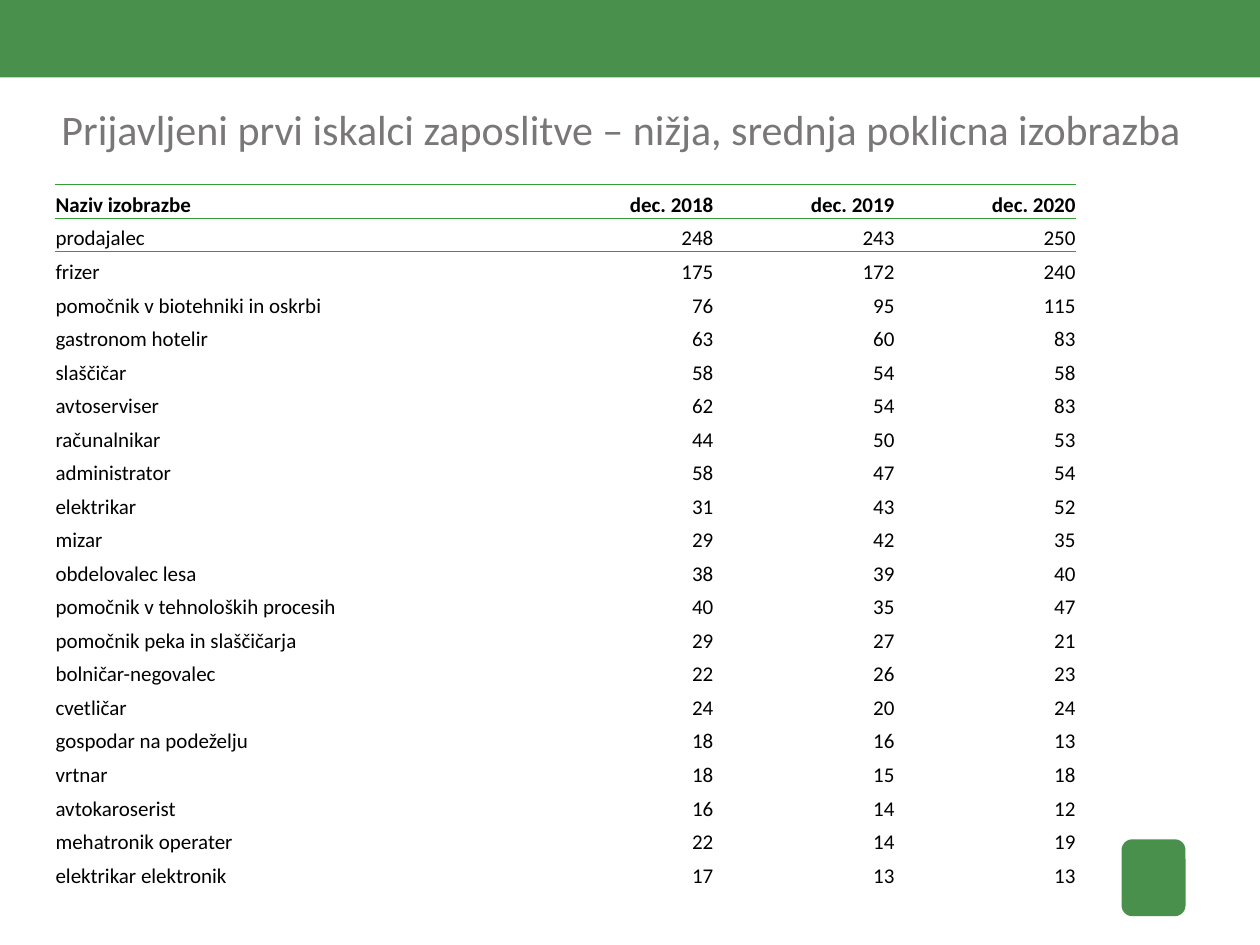
from typing import NamedTuple

from lxml.etree import SubElement
from pptx import Presentation
from pptx.dml.color import RGBColor
from pptx.enum.shapes import MSO_SHAPE
from pptx.enum.text import MSO_ANCHOR, PP_ALIGN
from pptx.oxml.ns import qn
from pptx.util import Cm, Pt

GREEN = RGBColor(0x49, 0x90, 0x4D)
RULE_GREEN = RGBColor(0x33, 0x9E, 0x35)
GREY = RGBColor(0x79, 0x77, 0x77)
BLACK = RGBColor(0, 0, 0)

FONT = "Calibri"
NO_GRID_STYLE = "{2D5ABB26-0587-4C30-8999-92F81FD0307C}"
NAME_WIDTH, YEAR_WIDTH = Cm(9.65), Cm(3.65)
TABLE_HEIGHT = Cm(14.2)
TITLE = "Prijavljeni prvi iskalci zaposlitve – nižja, srednja poklicna izobrazba"


class Occupation(NamedTuple):
    name: str
    dec_2018: int | str
    dec_2019: int | str
    dec_2020: int | str


HEADER = Occupation("Naziv izobrazbe", "dec. 2018", "dec. 2019", "dec. 2020")
OCCUPATIONS = [
    Occupation("prodajalec", 248, 243, 250),
    Occupation("frizer", 175, 172, 240),
    Occupation("pomočnik v biotehniki in oskrbi", 76, 95, 115),
    Occupation("gastronom hotelir", 63, 60, 83),
    Occupation("slaščičar", 58, 54, 58),
    Occupation("avtoserviser", 62, 54, 83),
    Occupation("računalnikar", 44, 50, 53),
    Occupation("administrator", 58, 47, 54),
    Occupation("elektrikar", 31, 43, 52),
    Occupation("mizar", 29, 42, 35),
    Occupation("obdelovalec lesa", 38, 39, 40),
    Occupation("pomočnik v tehnoloških procesih", 40, 35, 47),
    Occupation("pomočnik peka in slaščičarja", 29, 27, 21),
    Occupation("bolničar-negovalec", 22, 26, 23),
    Occupation("cvetličar", 24, 20, 24),
    Occupation("gospodar na podeželju", 18, 16, 13),
    Occupation("vrtnar", 18, 15, 18),
    Occupation("avtokaroserist", 16, 14, 12),
    Occupation("mehatronik operater", 22, 14, 19),
    Occupation("elektrikar elektronik", 17, 13, 13),
]


def format_text(paragraph, size: int, color: RGBColor, bold: bool = False) -> None:
    for run in paragraph.runs:
        run.font.name = FONT
        run.font.size = Pt(size)
        run.font.color.rgb = color
        run.font.bold = bold


def add_green_shape(slide, kind: MSO_SHAPE, left: Cm, top: Cm, width: Cm, height: Cm) -> None:
    shape = slide.shapes.add_shape(kind, left, top, width, height)
    shape.shadow.inherit = False
    shape.fill.solid()
    shape.fill.fore_color.rgb = GREEN
    shape.line.fill.background()


def add_rules(cell, sides: tuple[str, ...]) -> None:
    """Draw thin green borders on the given sides, which precede the cell fill."""
    properties = cell._tc.get_or_add_tcPr()
    for position, side in enumerate(sides):
        border = SubElement(properties, qn(f"a:{side}"), w=str(Pt(0.5)))
        fill = SubElement(border, qn("a:solidFill"))
        SubElement(fill, qn("a:srgbClr"), val=str(RULE_GREEN))
        properties.insert(position, border)


def fill_cell(cell, content: int | str, is_name: bool, is_header: bool) -> None:
    cell.margin_left = cell.margin_right = cell.margin_top = Cm(0.02)
    cell.margin_bottom = 0
    cell.vertical_anchor = MSO_ANCHOR.BOTTOM
    cell.fill.background()
    paragraph = cell.text_frame.paragraphs[0]
    paragraph.text = str(content)
    paragraph.alignment = PP_ALIGN.LEFT if is_name else PP_ALIGN.RIGHT
    format_text(paragraph, 12, BLACK, bold=is_header)


def add_occupation_table(slide) -> None:
    records = [HEADER, *OCCUPATIONS]
    table = slide.shapes.add_table(
        len(records), len(HEADER), Cm(1.1), Cm(3.72),
        NAME_WIDTH + 3 * YEAR_WIDTH, TABLE_HEIGHT,
    ).table
    table._tbl.tblPr.find(qn("a:tableStyleId")).text = NO_GRID_STYLE
    table.horz_banding = False
    for index, column in enumerate(table.columns):
        column.width = YEAR_WIDTH if index else NAME_WIDTH
    for row_index, (row, record) in enumerate(zip(table.rows, records)):
        row.height = TABLE_HEIGHT // len(records)
        for column_index, (cell, content) in enumerate(zip(row.cells, record)):
            fill_cell(cell, content, column_index == 0, row_index == 0)
            if row_index == 0:
                add_rules(cell, ("lnT", "lnB"))
            elif row_index == 1:
                add_rules(cell, ("lnT",))


def add_title(slide) -> None:
    title_frame = slide.shapes.add_textbox(Cm(1.24), Cm(2.08), Cm(23.52), Cm(1.8)).text_frame
    title_frame.word_wrap = True
    title_frame.margin_left = title_frame.margin_right = 0
    title_frame.margin_top = title_frame.margin_bottom = 0
    title_frame.text = TITLE
    format_text(title_frame.paragraphs[0], 24, GREY)


def main() -> None:
    presentation = Presentation()
    presentation.slide_width, presentation.slide_height = Cm(25.4), Cm(19.05)
    slide = presentation.slides.add_slide(presentation.slide_layouts[6])

    # Top band and plain emblem
    add_green_shape(slide, MSO_SHAPE.RECTANGLE, Cm(0), Cm(-0.02), Cm(25.4), Cm(1.58))
    add_green_shape(slide, MSO_SHAPE.ROUNDED_RECTANGLE, Cm(22.61), Cm(16.92), Cm(1.29), Cm(1.55))

    # Heading and figures
    add_title(slide)
    add_occupation_table(slide)

    presentation.save("out.pptx")


if __name__ == "__main__":
    main()
